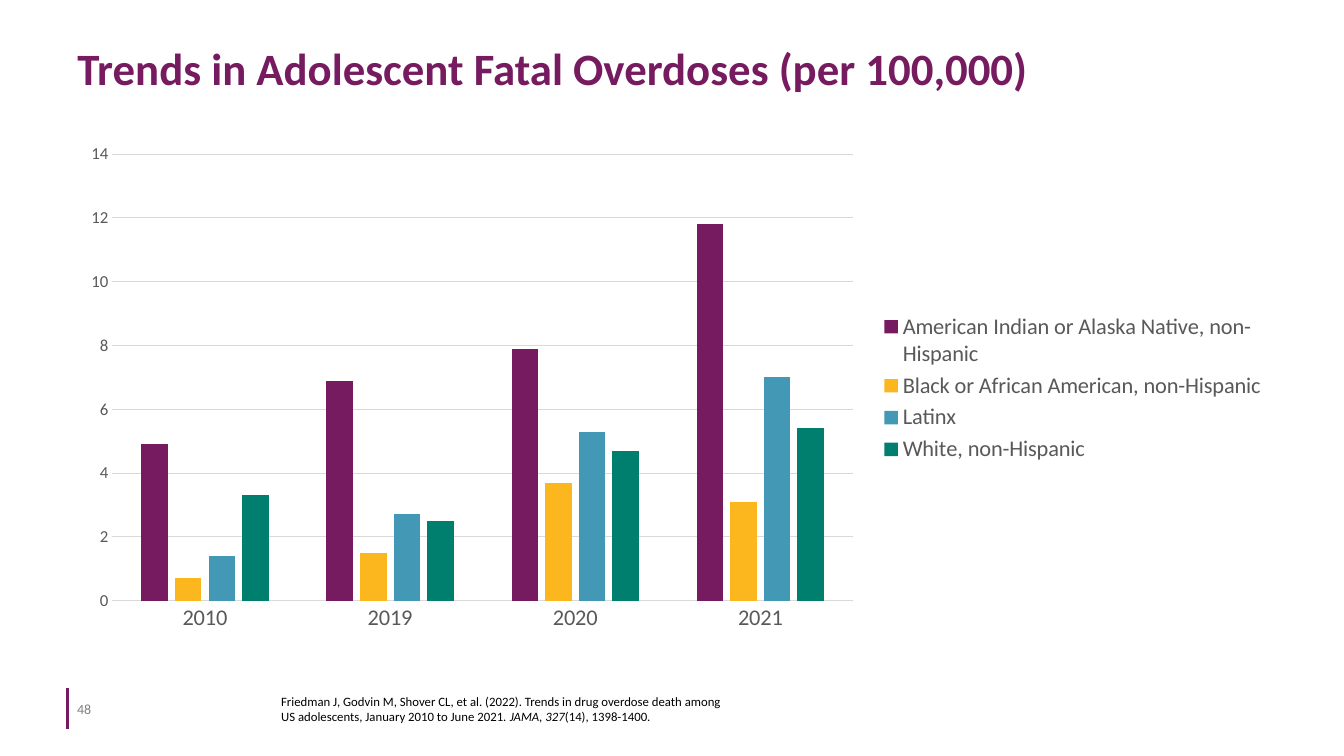
import pptx
import pptx.chart.data
import pptx.dml.color
import pptx.enum.chart
import pptx.enum.shapes
import pptx.enum.text
import pptx.oxml
import pptx.oxml.ns
import pptx.util

WIDTH, HEIGHT = 13.33, 7.5
MARGIN = WIDTH * 0.05
CONTENT_WIDTH = WIDTH * 0.9
FOOTER_TOP, FOOTER_HEIGHT = 6.83, 0.4
FONT = "Calibri"
COLORS = {
    "plum": "771B61",
    "gold": "FCB71E",
    "blue": "4298B5",
    "green": "007F6E",
    "label": "595959",
    "grid": "D9D9D9",
    "number": "808080",
    "black": "000000",
}
YEARS = ["2010", "2019", "2020", "2021"]
GROUPS = [
    ("American Indian or Alaska Native, non-Hispanic", "plum", (4.9, 6.9, 7.9, 11.8)),
    ("Black or African American, non-Hispanic", "gold", (0.7, 1.5, 3.7, 3.1)),
    ("Latinx", "blue", (1.4, 2.7, 5.3, 7)),
    ("White, non-Hispanic", "green", (3.3, 2.5, 4.7, 5.4)),
]
CITATION = [
    ("Friedman J, Godvin M, Shover CL, et al. (2022). Trends in drug overdose death among "
     "US adolescents, January 2010 to June 2021. ", False),
    ("JAMA, 327", True),
    ("(14), 1398-1400.", False),
]


def apply(target, values):
    for name, value in values.items():
        setattr(target, name, value)


def rgb(name):
    return pptx.dml.color.RGBColor.from_string(COLORS[name])


def inches(*lengths):
    return [pptx.util.Inches(length) for length in lengths]


def set_font(font, size, color, **extra):
    apply(font, {"name": FONT, "size": pptx.util.Pt(size), **extra})
    font.color.rgb = rgb(color)


def set_line(line, color, width):
    line.color.rgb = rgb(color)
    line.width = pptx.util.Pt(width)


def place(shape, left, top, width, height):
    apply(shape, dict(zip(("left", "top", "width", "height"), inches(left, top, width, height))))


def add_title(page, text):
    title = page.shapes.title
    place(title, MARGIN, 0.15, CONTENT_WIDTH, 1.04)
    title.text_frame.vertical_anchor = pptx.enum.text.MSO_ANCHOR.MIDDLE
    para = title.text_frame.paragraphs[0]
    para.alignment = pptx.enum.text.PP_ALIGN.LEFT
    span = para.add_run()
    span.text = text
    set_font(span.font, 32, "plum", bold=True)


def add_footer_text(page, left, width, spans, size, color, anchor):
    box = page.shapes.add_textbox(*inches(left, FOOTER_TOP, width, FOOTER_HEIGHT))
    apply(box.text_frame, {"word_wrap": True, "vertical_anchor": anchor})
    para = box.text_frame.paragraphs[0]
    for text, italic in spans:
        span = para.add_run()
        span.text = text
        set_font(span.font, size, color, italic=italic)


def add_footer_rule(page):
    rule = page.shapes.add_connector(
        pptx.enum.shapes.MSO_CONNECTOR.STRAIGHT,
        *inches(MARGIN, FOOTER_TOP + FOOTER_HEIGHT, MARGIN, FOOTER_TOP))
    set_line(rule.line, "plum", 2.25)
    rule._element.spPr.append(pptx.oxml.parse_xml(
        f'<a:effectLst {pptx.oxml.ns.nsdecls("a")}/>'))


def format_axis(axis, size):
    no_tick = pptx.enum.chart.XL_TICK_MARK.NONE
    apply(axis, {"major_tick_mark": no_tick, "minor_tick_mark": no_tick})
    set_font(axis.tick_labels.font, size, "label")


def add_overdose_chart(page):
    data = pptx.chart.data.CategoryChartData()
    data.categories = YEARS
    for name, _, rates in GROUPS:
        data.add_series(name, rates)
    chart = page.shapes.add_chart(
        pptx.enum.chart.XL_CHART_TYPE.COLUMN_CLUSTERED,
        *inches(MARGIN, 1.33, CONTENT_WIDTH, 5.04), data).chart
    apply(chart, {"has_title": False, "has_legend": True})
    set_font(chart.font, 10, "black")

    plot = chart.plots[0]
    apply(plot, {"gap_width": 219, "overlap": -27, "vary_by_categories": False})
    for series, (_, color, _) in zip(plot.series, GROUPS):
        series.format.fill.solid()
        series.format.fill.fore_color.rgb = rgb(color)

    format_axis(chart.category_axis, 16)
    set_line(chart.category_axis.format.line, "grid", 0.75)
    format_axis(chart.value_axis, 12)
    apply(chart.value_axis, {"minimum_scale": 0, "maximum_scale": 14, "major_unit": 2})
    chart.value_axis.format.line.fill.background()
    set_line(chart.value_axis.major_gridlines.format.line, "grid", 0.75)

    apply(chart.legend, {
        "position": pptx.enum.chart.XL_LEGEND_POSITION.RIGHT,
        "include_in_layout": False,
    })
    set_font(chart.legend.font, 16, "label")


def main():
    deck = pptx.Presentation()
    apply(deck, dict(zip(("slide_width", "slide_height"), inches(WIDTH, HEIGHT))))
    page = deck.slides.add_slide(deck.slide_layouts.get_by_name("Title Only"))
    anchors = pptx.enum.text.MSO_ANCHOR
    add_footer_rule(page)
    add_title(page, "Trends in Adolescent Fatal Overdoses (per 100,000)")
    add_overdose_chart(page)
    add_footer_text(page, 2.69, 4.63, CITATION, 9.1, "black", anchors.TOP)
    add_footer_text(page, MARGIN, 0.61, [("48", False)], 10, "number", anchors.MIDDLE)
    deck.save("out.pptx")


if __name__ == "__main__":
    main()
